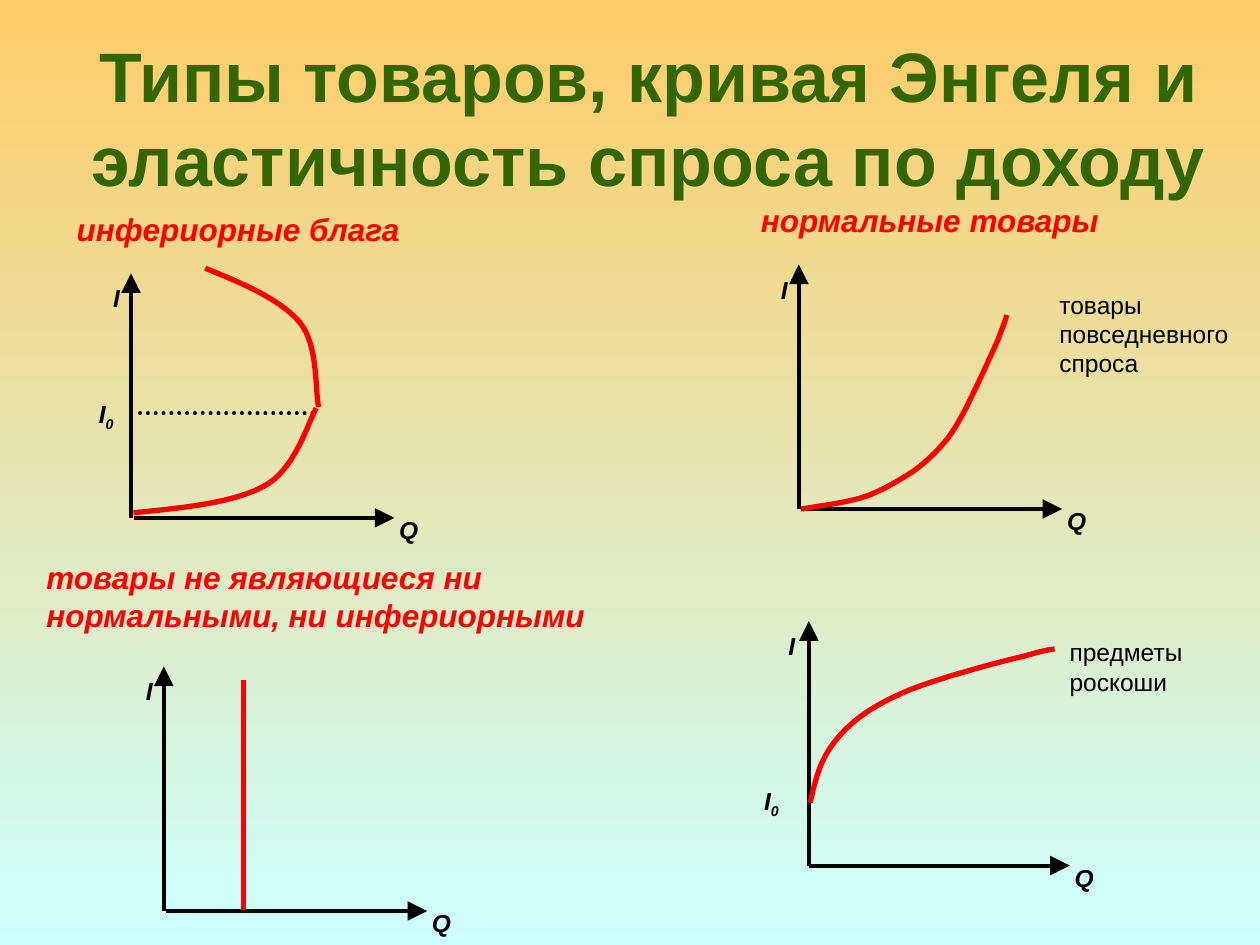
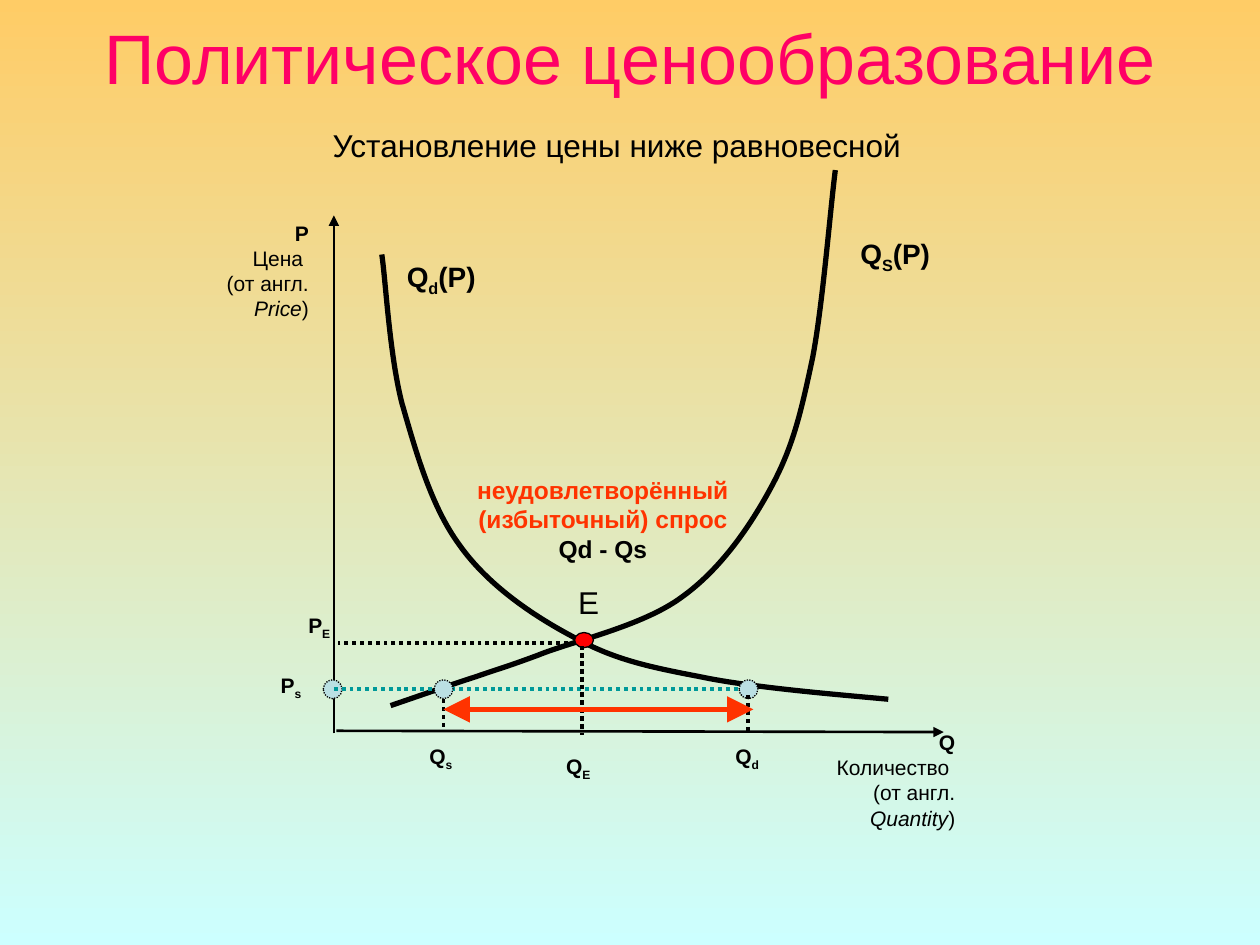
from lxml import etree
from pptx import Presentation
from pptx.dml.color import RGBColor
from pptx.enum import dml, shapes, text
from pptx.oxml import ns
from pptx.util import Inches, Pt

BLACK, RED, ORANGE, TEAL, PALE = "000000", "FF0000", "FF3300", "009999", "BBE0E3"
GREEN, PINK, SKY_TOP, SKY_BOTTOM = "336600", "FF0066", "FFCC66", "CCFFFF"
FONT = "Arial"
LEFT, CENTER, RIGHT = text.PP_ALIGN.LEFT, text.PP_ALIGN.CENTER, text.PP_ALIGN.RIGHT
TOP, MIDDLE = text.MSO_ANCHOR.TOP, text.MSO_ANCHOR.MIDDLE
DOTS = dml.MSO_LINE.ROUND_DOT

INFERIOR_LOW = [(.02, .04), (.42, .08), (.83, .12), (1.07, .26), (1.31, .4), (1.41, .77), (1.47, .87)]
INFERIOR_HIGH = [(.59, 1.98), (.89, 1.86), (1.19, 1.73), (1.34, 1.55), (1.49, 1.37), (1.46, .99), (1.49, .88)]
EVERYDAY = [(.02, 0), (.2, .03), (.38, .05), (.53, .1), (.67, .15), (.8, .23), (.91, .3),
            (1.02, .38), (1.11, .47), (1.19, .57), (1.26, .67), (1.32, .78), (1.38, .91),
            (1.44, 1.03), (1.53, 1.23), (1.58, 1.34), (1.62, 1.45), (1.64, 1.49), (1.65, 1.54)]
LUXURY = [(.01, .5), (.04, .63), (.07, .76), (.13, .87), (.19, .98), (.28, 1.08), (.38, 1.16),
          (.48, 1.24), (.59, 1.3), (.72, 1.36), (.85, 1.42), (.98, 1.46), (1.14, 1.51),
          (1.31, 1.56), (1.56, 1.63), (1.7, 1.66), (1.83, 1.7), (1.89, 1.71), (1.95, 1.72)]
DEMAND = [(.38, 3.78), (.41, 3.59), (.44, 2.99), (.54, 2.6), (.65, 2.22), (.77, 1.78), (1, 1.47),
          (1.22, 1.16), (1.57, .92), (1.89, .75), (2.21, .57), (2.48, .51), (2.9, .43),
          (3.32, .34), (4.08, .28), (4.4, .25)]
SUPPLY = [(.45, .2), (.57, .24), (.94, .37), (1.13, .43), (1.33, .5), (1.35, .5), (1.62, .6),
          (1.89, .71), (2.45, .83), (2.76, 1.06), (3.07, 1.28), (3.31, 1.63), (3.48, 1.95),
          (3.65, 2.27), (3.71, 2.54), (3.8, 2.96), (3.88, 3.38), (3.94, 4.14), (3.98, 4.45)]


def rgb(value):
    return RGBColor.from_string(value)


def style_line(line, color, width, dash=None):
    line.color.rgb = rgb(color)
    line.width = Pt(width)
    if dash:
        line.dash_style = dash


def add_text(s, box, paras, size, color=BLACK, align=LEFT, anchor=TOP, wrap=True, style=""):
    tf = s.shapes.add_textbox(*map(Inches, box)).text_frame
    tf.word_wrap, tf.vertical_anchor = wrap, anchor
    for i, runs in enumerate(paras):
        p = tf.paragraphs[0] if i == 0 else tf.add_paragraph()
        p.alignment = align
        for words, marks, *own_color in runs:
            marks += style
            r = p.add_run()
            r.text = words
            formats = {"name": FONT, "size": Pt(size), "bold": "b" in marks, "italic": "i" in marks}
            for key, value in formats.items():
                setattr(r.font, key, value)
            r.font.color.rgb = rgb(own_color[0] if own_color else color)
            if "_" in marks:
                r._r.get_or_add_rPr().set("baseline", "-25000")


def add_line(s, start, end, color=BLACK, width=2.25, dash=None, arrows=(), head="lg", cap="flat"):
    points = [Inches(v) for v in (*start, *end)]
    c = s.shapes.add_connector(shapes.MSO_CONNECTOR.STRAIGHT, *points)
    style_line(c.line, color, width, dash)
    ln = c.line._get_or_add_ln()
    ln.set("cap", cap)
    for arrow in arrows:
        etree.SubElement(ln, ns.qn(f"a:{arrow}"), type="triangle", w=head, len=head)
    etree.SubElement(c._element.spPr, ns.qn("a:effectLst"))


def add_curve(s, origin, points, color):
    x, y = origin
    knots = [(Inches(x + dx), Inches(y - up)) for dx, up in points]
    builder = s.shapes.build_freeform(*knots[0])
    builder.add_line_segments(knots[1:], close=False)
    sp = builder.convert_to_shape()
    sp.shadow.inherit = False
    sp.fill.background()
    style_line(sp.line, color, 3)
    segments = list(sp._element.iter(ns.qn("a:lnTo")))
    for i in range(0, len(segments), 3):
        bend = etree.SubElement(segments[i].getparent(), ns.qn("a:cubicBezTo"))
        for segment in segments[i:i + 3]:
            bend.append(segment[0])
            segment.getparent().remove(segment)


def add_dot(s, center, fill, height=.15, dash=None):
    x, y = center
    box = (x - .075, y - height / 2, .15, height)
    sp = s.shapes.add_shape(shapes.MSO_SHAPE.OVAL, *map(Inches, box))
    sp.shadow.inherit = False
    sp.fill.solid()
    sp.fill.fore_color.rgb = rgb(fill)
    style_line(sp.line, BLACK, .75, dash)


def add_slide(prs, title, box, color, style=""):
    s = prs.slides.add_slide(prs.slide_layouts[6])
    fill = s.background.fill
    fill.gradient()
    fill.gradient_angle = 270
    for stop, shade in zip(fill.gradient_stops, (SKY_TOP, SKY_BOTTOM)):
        stop.color.rgb = rgb(shade)
    add_text(s, box, [[(title, style)]], 40, color, CENTER, MIDDLE)
    return s


def engel_chart(s, x, y, curves=(), income_mark=None, gap=.02):
    axes = s.shapes.add_group_shape()
    left = x + gap
    add_line(axes, (x, y), (x, y - 1.94), arrows=["tailEnd"])
    add_line(axes, (left, y), (left + 2.07, y), arrows=["tailEnd"])
    add_text(axes, (left - .42, y - 1.91, .41, .33), [[("I", "")]], 14, align=RIGHT, style="bi")
    add_text(axes, (left + 2.01, y - .07, .65, .33), [[("Q", "")]], 14, style="bi")
    if income_mark:
        dx, up = income_mark
        add_text(axes, (x + dx, y - up, .41, .33), [[("I", ""), ("0", "_")]], 14, align=RIGHT, style="bi")
    for points in curves:
        add_curve(s, (x, y), points, RED)


def market_chart(s, x, y):
    def at(dx, up):
        return x + dx, y - up

    q_s, q_e, q_d = .87, 1.97, 3.29
    p_s, p_e = .33, .7
    add_line(s, at(q_e + .01, p_e), at(.03, p_e), dash=DOTS)
    add_line(s, at(q_e, .74), at(q_e, .03), dash=DOTS)
    add_line(s, at(0, -.02), at(0, 4.09), width=1.5, arrows=["tailEnd"], head="med")
    add_line(s, at(.02, 0), at(4.84, -.01), width=1.5, arrows=["tailEnd"], head="med")
    for points in (DEMAND, SUPPLY):
        add_curve(s, (x, y), points, BLACK)
    add_dot(s, at(1.985, .72), RED, height=.12)
    add_dot(s, at(-.01, p_s), PALE, dash=DOTS)
    add_line(s, at(0, p_s), at(3.24, p_s), TEAL, dash=DOTS)
    for q in (q_s, q_d):
        add_dot(s, at(q, p_s), PALE, dash=DOTS)
    for q, up, bottom in ((q_e, .67, -.03), (q_s, .25, 0), (q_d, .28, 0)):
        add_line(s, at(q, up), at(q, bottom), dash=DOTS)
    add_line(s, at(q_s, .17), at(3.33, .17), ORANGE, 3, arrows=["headEnd", "tailEnd"])

    for name, dx, drop in (("s", .6, .05), ("E", 1.69, .13), ("d", 3.03, .05)):
        add_text(s, (*at(dx, -drop), .5, .31), [[("Q", ""), (name, "_")]], 12, align=CENTER, style="b")
    for name, dx, up in (("E", -.41, .99), ("s", -.64, .51)):
        add_text(s, (*at(dx, up), .48, .36), [[("P", ""), (name, "_")]], 12, align=RIGHT, style="b")
    for name, dx, up, width in (("d", .48, 3.79, .89), ("S", 4.08, 3.97, .83)):
        add_text(s, (*at(dx, up), width, .38), [[("Q", ""), (name, "_"), ("(P)", "")]], 16, style="b")
    for sign, name, english, box in (("P", "Цена ", "Price", (*at(-1.12, 4.1), 1.02, 1.17)),
                                     ("Q", "Количество ", "Quantity", (*at(3.42, .06), 1.61, 1.02))):
        paras = [[(sign, "b")], [(name, "")], [("(от англ.", "")], [(english, "i"), (")", "")]]
        add_text(s, box, paras, 12, align=RIGHT)
    add_text(s, (*at(1.84, 1.22), .48, .4), [[("E", "")]], 18)
    add_text(s, (*at(1, 2.08), 2.27, .8),
             [[("неудовлетворённый (избыточный) спрос", "", ORANGE)], [("Qd - Qs", "")]],
             14, align=CENTER, style="b")


def goods_slide(prs):
    s = add_slide(prs, "Типы товаров, кривая Энгеля и эластичность спроса по доходу",
                  (.5, .3, 9.29, 1.25), GREEN, "b")
    for heading, box, wrap in (
            ("инфериорные блага", (.51, 1.62, 2.77, .4), False),
            ("нормальные товары", (5.94, 1.55, 2.89, .4), False),
            ("товары не являющиеся ни нормальными, ни инфериорными", (.27, 4.38, 4.57, .7), True)):
        add_text(s, box, [[(heading, "bi")]], 18, RED, wrap=wrap)
    add_line(s, (2.48, 3.28), (1.06, 3.28), dash=DOTS, cap="rnd")
    engel_chart(s, 1.04, 4.11, [INFERIOR_LOW, INFERIOR_HIGH], (-.45, .99))
    engel_chart(s, 6.34, 4.04, [EVERYDAY])
    engel_chart(s, 6.42, 6.87, [LUXURY], (-.55, .68), gap=0)
    engel_chart(s, 1.3, 7.23)
    add_line(s, (1.93, 5.4), (1.93, 7.22), RED, 3)
    add_text(s, (8.31, 2.25, 1.57, .8), [[("товары повседневного спроса", "")]], 14)
    add_text(s, (8.39, 5.01, 1.57, .57), [[("предметы роскоши", "")]], 14)


def pricing_slide(prs):
    s = add_slide(prs, "Политическое ценообразование", (.5, .19, 9, .52), PINK)
    add_text(s, (.77, .95, 8.25, .4), [[("Установление цены ниже равновесной", "")]], 18, align=CENTER)
    market_chart(s, 2.65, 5.8)


def main():
    prs = Presentation()
    prs.slide_width, prs.slide_height = Inches(10), Inches(7.5)
    goods_slide(prs)
    pricing_slide(prs)
    prs.save("out.pptx")


if __name__ == "__main__":
    main()
